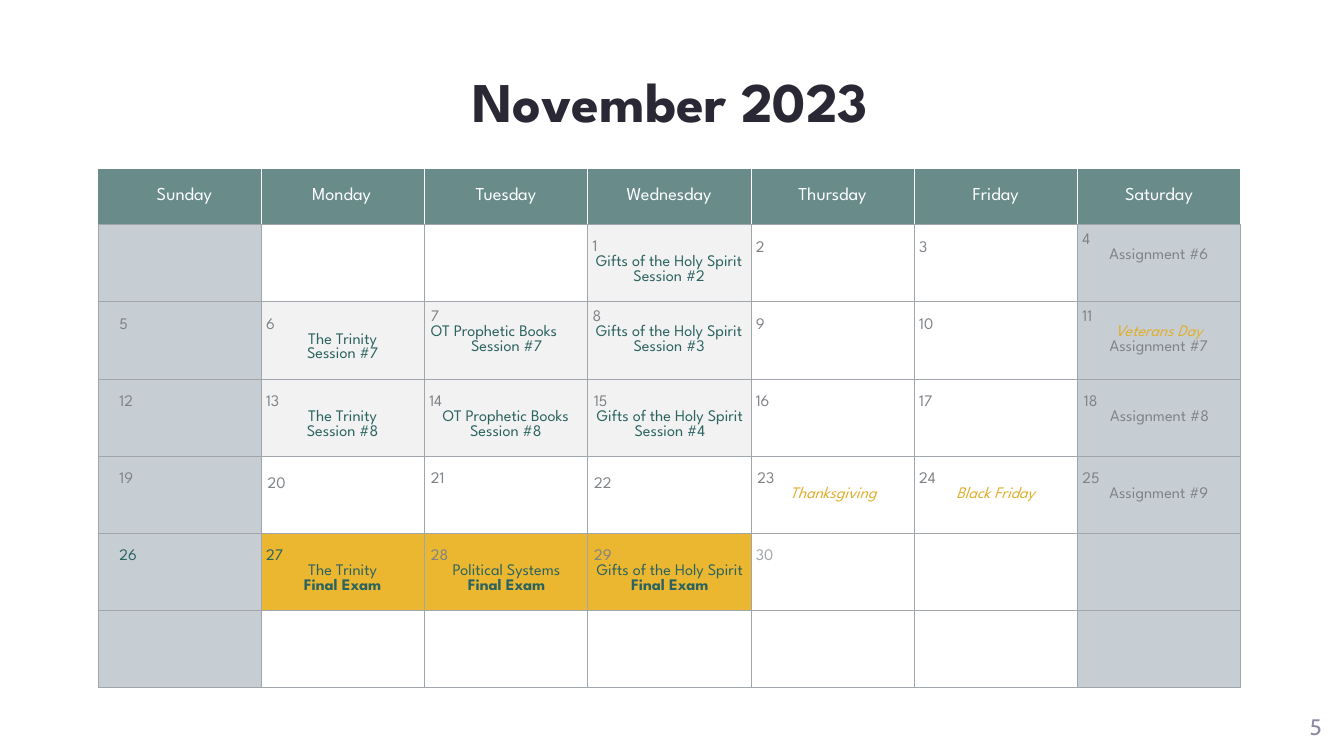
from lxml import etree
from pptx import Presentation
from pptx.dml.color import RGBColor
from pptx.enum.text import MSO_ANCHOR, PP_ALIGN
from pptx.oxml.ns import qn
from pptx.util import Inches, Pt

LEFT, CENTER, RIGHT = PP_ALIGN.LEFT, PP_ALIGN.CENTER, PP_ALIGN.RIGHT
MIDDLE = MSO_ANCHOR.MIDDLE

WHITE = RGBColor(0xFF, 0xFF, 0xFF)
INK = RGBColor(0x2A, 0x28, 0x34)
LILAC = RGBColor(0x8D, 0x88, 0xA4)
TEAL = RGBColor(0x69, 0x8C, 0x8B)
GREEN = RGBColor(0x2B, 0x63, 0x60)
GRAY = RGBColor(0x7F, 0x83, 0x87)
BORDER = RGBColor(0xA0, 0xA6, 0xAB)
WEEKEND = RGBColor(0xC6, 0xCE, 0xD4)
SESSION = RGBColor(0xF2, 0xF2, 0xF2)
EXAM = RGBColor(0xEB, 0xB7, 0x30)
GOLD = RGBColor(0xE1, 0xAE, 0x2C)

DISPLAY_FONT = "League Spartan"
WEEKDAYS = ["Sunday", "Monday", "Tuesday", "Wednesday", "Thursday", "Friday", "Saturday"]
WEEKS = 6
FIRST_COLUMN = 3  # the month starts on a Wednesday
DAYS = 30
LINE_HEIGHT = 0.29

TRINITY = "The Trinity"
PROPHETS = "OT Prophetic Books"
GIFTS = "Gifts of the Holy Spirit"
FINAL = "Final Exam"
EVENTS = {
    1: [GIFTS, "Session #2"],
    4: ["Assignment #6"],
    6: [TRINITY, "Session #7"],
    7: [PROPHETS, "Session #7"],
    8: [GIFTS, "Session #3"],
    11: ["Veterans Day", "Assignment #7"],
    13: [TRINITY, "Session #8"],
    14: [PROPHETS, "Session #8"],
    15: [GIFTS, "Session #4"],
    18: ["Assignment #8"],
    23: ["Thanksgiving"],
    24: ["Black Friday"],
    25: ["Assignment #9"],
    27: [TRINITY, FINAL],
    28: ["Political Systems", FINAL],
    29: [GIFTS, FINAL],
}
HOLIDAYS = {"Veterans Day", "Thanksgiving", "Black Friday"}
DAY_COLORS = {26: GREEN, 27: GREEN, 30: BORDER}
INDENTED_DAYS = {7, 15, 18, 20, 21, 22, 23, 28, 29}
# Height of the text block in lines, where it is not three
BLOCK_LINES = {4: 4, 7: 4, 8: 4, 11: 4, 20: 2.35, 22: 2.35}


def write_paragraph(paragraph, text, size, color, alignment=LEFT, name=DISPLAY_FONT, **formats):
    paragraph.alignment = alignment
    run = paragraph.add_run()
    run.text = text
    run.font.color.rgb = color
    for key, value in {"size": Pt(size), "name": name, **formats}.items():
        setattr(run.font, key, value)


def format_cell(cell, fill, borders, margins):
    cell.vertical_anchor = MIDDLE
    for side, margin in zip(("left", "top", "right", "bottom"), margins):
        setattr(cell, f"margin_{side}", Inches(margin))
    properties = cell._tc.get_or_add_tcPr()
    for side, (color, width) in borders.items():
        line = etree.SubElement(properties, qn(f"a:ln{side}"), w=str(Pt(width)))
        solid = etree.SubElement(line, qn("a:solidFill"))
        etree.SubElement(solid, qn("a:srgbClr"), val=str(color))
    if fill is None:
        cell.fill.background()
    else:
        cell.fill.solid()
        cell.fill.fore_color.rgb = fill


presentation = Presentation()
presentation.slide_width = Inches(26.67)
presentation.slide_height = Inches(15)
slide = presentation.slides.add_slide(presentation.slide_layouts[6])

# Title and page number
for box, right_margin, spacing, text, formats in [
    ((2, 1.2, 22.6, 1.58), 0.1, 1, "November 2023",
     {"size": 80, "color": INK, "alignment": CENTER, "bold": True}),
    ((23.97, 13.84, 2.73, 0.9), 0.47, 1.5, "5",
     {"size": 32, "color": LILAC, "alignment": RIGHT, "name": "Cabin"}),
]:
    frame = slide.shapes.add_textbox(*map(Inches, box)).text_frame
    frame.word_wrap = True
    frame.vertical_anchor = MIDDLE
    frame.margin_right = Inches(right_margin)
    frame.paragraphs[0].line_spacing = spacing
    write_paragraph(frame.paragraphs[0], text, **formats)

# Calendar grid
calendar = slide.shapes.add_table(
    WEEKS + 1, len(WEEKDAYS), Inches(1.94), Inches(3.33), Inches(22.68), Inches(10.3)
).table
calendar.first_row = False
calendar.horz_banding = False
for column in calendar.columns:
    column.width = Inches(3.24)
for index, row in enumerate(calendar.rows):
    row.height = Inches(1.53 if index else 1.12)

# Weekday header
header_borders = {"L": (WHITE, 1), "R": (WHITE, 1), "B": (BORDER, 0.75)}
for column, weekday in enumerate(WEEKDAYS):
    cell = calendar.cell(0, column)
    format_cell(cell, TEAL, header_borders, (0 if column else 0.24, 0.04, 0.04 if column < 2 else 0, 0.04))
    write_paragraph(cell.text_frame.paragraphs[0], weekday, 26, WHITE, CENTER)

# Days
day_borders = {side: (BORDER, 0.75) for side in "LRTB"}
for index in range(WEEKS * 7):
    week, column = divmod(index, 7)
    day = index - FIRST_COLUMN + 1
    events = EVENTS.get(day, [])
    if column in (0, 6):
        fill = WEEKEND
    elif FINAL in events:
        fill = EXAM
    elif len(events) == 2:
        fill = SESSION
    else:
        fill = None

    # The bottom margin lifts short entries to the top of their block
    spare_lines = BLOCK_LINES.get(day, 3) - 1 - len(events)
    side_margin, end_margin = (0.1, 0.05) if column else (0.43, 0)
    margins = (side_margin, end_margin, 0.1 if column else 0.05,
               end_margin + spare_lines * LINE_HEIGHT)
    cell = calendar.cell(week + 1, column)
    format_cell(cell, fill, day_borders, margins)
    if not 1 <= day <= DAYS:
        continue

    frame = cell.text_frame
    write_paragraph(frame.paragraphs[0], str(day), 23, DAY_COLORS.get(day, GRAY))
    for event in events:
        holiday = event in HOLIDAYS
        color = GOLD if holiday else GRAY if event.startswith("Assignment") else GREEN
        alignment = LEFT if day == 7 and event == PROPHETS else CENTER
        write_paragraph(frame.add_paragraph(), event, 23, color, alignment,
                        italic=holiday, bold=event == FINAL)
    if day in INDENTED_DAYS:
        for paragraph in frame.paragraphs:
            paragraph._p.get_or_add_pPr().set("marL", str(Inches(0.03)))

presentation.save("out.pptx")
